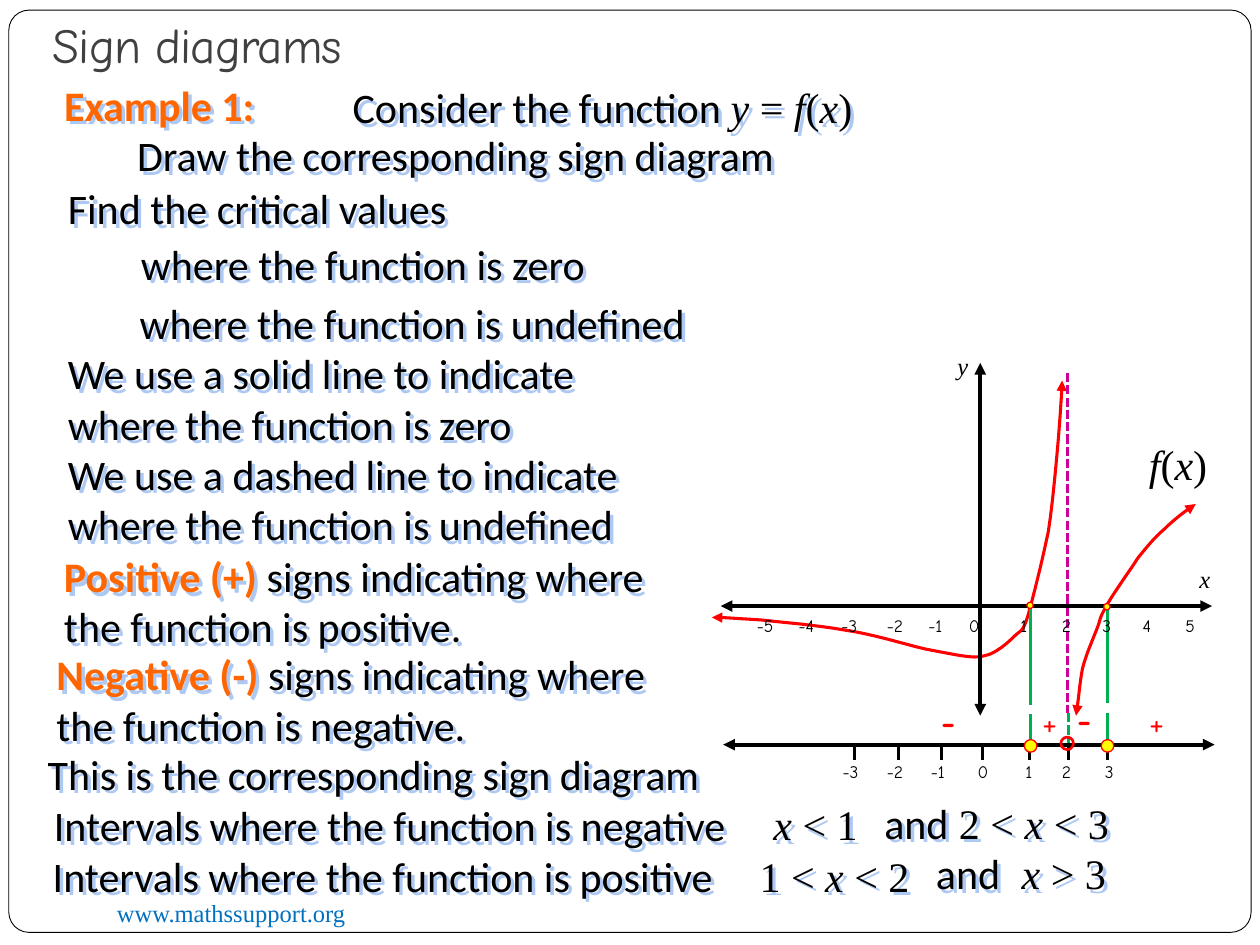
from lxml.etree import SubElement
from pptx import Presentation
from pptx.dml.color import RGBColor
from pptx.enum.dml import MSO_LINE
from pptx.enum.shapes import MSO_CONNECTOR, MSO_SHAPE
from pptx.enum.text import MSO_ANCHOR
from pptx.oxml.ns import qn
from pptx.util import Inches, Pt

COLORS = {
    "black": "000000", "white": "FFFFFF", "gray": "404040", "red": "FF0000",
    "orange": "FF6600", "yellow": "FFFF00", "green": "00B050",
    "magenta": "CC0099", "blue": "0070C0", "shadow": "ADC8F2",
}
STYLES = {
    "body": ("Calibri", "black", False, False),
    "key": ("Calibri", "orange", True, False),
    "math": ("Times New Roman", "black", False, False),
    "variable": ("Times New Roman", "black", False, True),
    "link": ("Times New Roman", "blue", False, False),
    "title": ("Comic Neue", "gray", False, False),
    "number": ("Comic Neue", "black", False, False),
    "plus": ("Comic Neue", "red", False, False),
    "minus": ("Comic Neue", "red", True, False),
}

presentation = Presentation()
presentation.slide_width = Inches(10)
presentation.slide_height = Inches(7.5)
slide = presentation.slides.add_slide(presentation.slide_layouts[6])
shapes = slide.shapes


def add_text(runs, left, top, width, height, size, shadow=False):
    box = shapes.add_textbox(Inches(left), Inches(top), Inches(width), Inches(height))
    box.text_frame.word_wrap = True
    paragraph = box.text_frame.paragraphs[0]
    for text, style in runs:
        run = paragraph.add_run()
        run.text = text
        name, color, bold, italic = STYLES[style]
        run.font.name = name
        run.font.size = Pt(size)
        run.font.bold = bold
        run.font.italic = italic
        run.font.color.rgb = RGBColor.from_string(COLORS[color])
    if shadow:
        effects = SubElement(box._element.spPr, qn("a:effectLst"))
        outer = SubElement(effects, qn("a:outerShdw"), dist="35921", dir="2700000", algn="ctr", rotWithShape="0")
        SubElement(outer, qn("a:srgbClr"), val=COLORS["shadow"])
    return box


def set_outline(shape, color, width, dashed=False, arrows=False):
    shape.line.color.rgb = RGBColor.from_string(COLORS[color])
    shape.line.width = Pt(width)
    if dashed:
        shape.line.dash_style = MSO_LINE.SQUARE_DOT
    if arrows:
        outline = shape.line._get_or_add_ln()
        for end in ("a:headEnd", "a:tailEnd"):
            SubElement(outline, qn(end), type="triangle")
    SubElement(shape._element.spPr, qn("a:effectLst"))


frame = shapes.add_shape(MSO_SHAPE.ROUNDED_RECTANGLE, Inches(0.07), Inches(0.08), Inches(9.86), Inches(7.32))
frame.adjustments[0] = 0.022
frame.fill.solid()
frame.fill.fore_color.rgb = RGBColor.from_string(COLORS["white"])
set_outline(frame, "black", 0.5)

add_text([("www.mathssupport.org", "link")], 0.83, 7.08, 3.25, 0.34, 14)
title = add_text([("Sign diagrams", "title")], 0.32, 0.08, 9, 0.55, 28)
title.text_frame.vertical_anchor = MSO_ANCHOR.BOTTOM
title.text_frame.paragraphs[0].line_spacing = 0.85
title.text_frame.paragraphs[0].runs[0].font._element.set("spc", "-50")

curves = [
    [(5.65, 4.9), (5.76, 4.9), (5.86, 4.91), (6.04, 4.92), (6.21, 4.94), (6.48, 4.96), (6.7, 5),
     (6.92, 5.03), (7.17, 5.11), (7.34, 5.15), (7.5, 5.18), (7.59, 5.2), (7.68, 5.21),
     (7.76, 5.22), (7.8, 5.21), (7.86, 5.19), (7.93, 5.16), (8, 5.1), (8.05, 5.05),
     (8.1, 5), (8.12, 5.02), (8.16, 4.88), (8.2, 4.74), (8.27, 4.46), (8.32, 4.22),
     (8.36, 3.98), (8.42, 3.31), (8.43, 3.02)],
    [(8.54, 5.68), (8.56, 5.55), (8.57, 5.42), (8.59, 5.31), (8.62, 5.19), (8.68, 5.06), (8.71, 4.98),
     (8.74, 4.9), (8.72, 4.92), (8.77, 4.83), (8.82, 4.73), (8.96, 4.54), (9.03, 4.43),
     (9.11, 4.33), (9.16, 4.27), (9.24, 4.2), (9.31, 4.13), (9.4, 4.06), (9.49, 4)],
]
STEPS = 8
for controls in curves:
    points = []
    for first in range(0, len(controls) - 1, 3):
        for step in range(1, STEPS + 1):
            t = step / STEPS
            weights = ((1 - t) ** 3, 3 * t * (1 - t) ** 2, 3 * t * t * (1 - t), t ** 3)
            points.append(tuple(
                Inches(sum(weight * point[axis] for weight, point in zip(weights, controls[first:first + 4])))
                for axis in (0, 1)
            ))
    builder = shapes.build_freeform(Inches(controls[0][0]), Inches(controls[0][1]))
    builder.add_line_segments(points, close=False)
    curve = builder.convert_to_shape()
    curve.fill.background()
    set_outline(curve, "red", 1.75, arrows=True)

lines = [
    (8.48, 5.66, 8.48, 5.96, "green", 1.75, True, False),
    (8.18, 4.79, 8.18, 5.89, "green", 1.75, False, False),
    (8.79, 4.79, 8.79, 5.89, "green", 1.75, False, False),
    (8.47, 2.96, 8.47, 5.66, "magenta", 1.75, True, False),
    (5.74, 5.91, 9.64, 5.91, "black", 2.25, False, True),
    (7.78, 2.88, 7.78, 5.68, "black", 2.25, False, True),
    (5.72, 4.81, 9.62, 4.81, "black", 2.25, False, True),
]
for tick in (6.78, 7.13, 7.47, 7.8, 8.17, 8.48, 8.79):
    lines.append((tick, 5.93, tick, 6.03, "black", 1.75, False, False))
for x1, y1, x2, y2, color, width, dashed, arrows in lines:
    line = shapes.add_connector(MSO_CONNECTOR.STRAIGHT, Inches(x1), Inches(y1), Inches(x2), Inches(y2))
    set_outline(line, color, width, dashed, arrows)

markers = [
    (MSO_SHAPE.OVAL, 8.13, 5.87, 0.1, 0.1, "yellow", "red", 0.75),
    (MSO_SHAPE.OVAL, 8.74, 5.87, 0.1, 0.1, "yellow", "red", 0.75),
    (MSO_SHAPE.OVAL, 8.42, 5.85, 0.1, 0.1, None, "red", 1.5),
    (MSO_SHAPE.OVAL, 8.15, 4.78, 0.05, 0.05, "yellow", "red", 0.75),
    (MSO_SHAPE.OVAL, 8.76, 4.79, 0.05, 0.05, "yellow", "red", 0.75),
    (MSO_SHAPE.RECTANGLE, 8.69, 5.59, 0.3, 0.06, "white", "white", 1),
    (MSO_SHAPE.RECTANGLE, 7.96, 5.6, 0.3, 0.06, "white", "white", 1),
]
for kind, left, top, width, height, fill, color, weight in markers:
    marker = shapes.add_shape(kind, Inches(left), Inches(top), Inches(width), Inches(height))
    if fill:
        marker.fill.solid()
        marker.fill.fore_color.rgb = RGBColor.from_string(COLORS[fill])
    else:
        marker.fill.background()
    set_outline(marker, color, weight)

number_rows = [
    (4.83, -5, (5.91, 6.24, 6.58, 6.94, 7.27, 7.59, 8, 8.33, 8.65, 8.97, 9.31)),
    (5.99, -3, (6.59, 6.94, 7.29, 7.66, 8.04, 8.33, 8.67)),
]
for top, first, lefts in number_rows:
    for number, left in enumerate(lefts, first):
        width = 0.4 if number < 0 else 0.32
        add_text([(str(number), "number")], left, top, width, 0.27, 10)

for sign, style, left, top in [
    ("-", "minus", 7.37, 5.5), ("+", "plus", 8.17, 5.51),
    ("-", "minus", 8.45, 5.49), ("+", "plus", 9.02, 5.51),
]:
    add_text([(sign, style)], left, top, 0.32, 0.44, 20)

for name, left, top in [("y", 7.5, 2.74), ("x", 9.42, 4.43)]:
    add_text([(name, "variable")], left, top, 0.32, 0.34, 14)

function_name = [("f", "variable"), ("(", "math"), ("x", "variable"), (")", "math")]
add_text(function_name, 9.02, 3.43, 0.84, 0.5, 24)

statements = [
    (0.41, 0.58, 2.28, 0.5, [("Example 1:", "key")]),
    (2.7, 0.6, 5.26, 0.5, [("Consider the function ", "body"), ("y", "variable"), (" = ", "math")] + function_name),
    (0.99, 0.98, 5.26, 0.5, [("Draw the corresponding sign diagram", "body")]),
    (0.44, 1.4, 5.26, 0.5, [("Find the critical values", "body")]),
    (1.02, 1.84, 4.19, 0.5, [("where the function is zero", "body")]),
    (1.01, 2.31, 4.55, 0.5, [("where the function is undefined", "body")]),
    (0.44, 2.71, 4.34, 0.91, [("We use a solid line to indicate where the function is zero", "body")]),
    (0.44, 3.51, 4.58, 0.91, [("We use a dashed line to indicate where the function is undefined", "body")]),
    (0.41, 4.32, 5.17, 0.91, [("Positive (+) ", "key"), ("signs indicating where the function is positive.", "body")]),
    (0.35, 5.1, 5.17, 0.91, [("Negative (-) ", "key"), ("signs indicating where the function is negative.", "body")]),
    (0.28, 5.89, 5.58, 0.5, [("This is the corresponding sign diagram", "body")]),
    (0.33, 6.3, 5.7, 0.5, [("Intervals where the function is negative", "body")]),
    (0.32, 6.7, 5.68, 0.5, [("Intervals where the function is positive", "body")]),
    (6.04, 6.29, 1.08, 0.5, [("x", "variable"), (" < 1", "math")]),
    (6.92, 6.28, 2.27, 0.5, [("and", "body"), (" 2 < ", "math"), ("x", "variable"), (" < 3", "math")]),
    (5.93, 6.7, 1.4, 0.5, [("1 < ", "math"), ("x", "variable"), (" < 2", "math")]),
    (7.33, 6.68, 0.75, 0.5, [("and", "body")]),
    (8.01, 6.68, 1.15, 0.5, [("x", "variable"), (" > 3", "math")]),
]
for left, top, width, height, runs in statements:
    add_text(runs, left, top, width, height, 24, shadow=True)

presentation.save("out.pptx")
